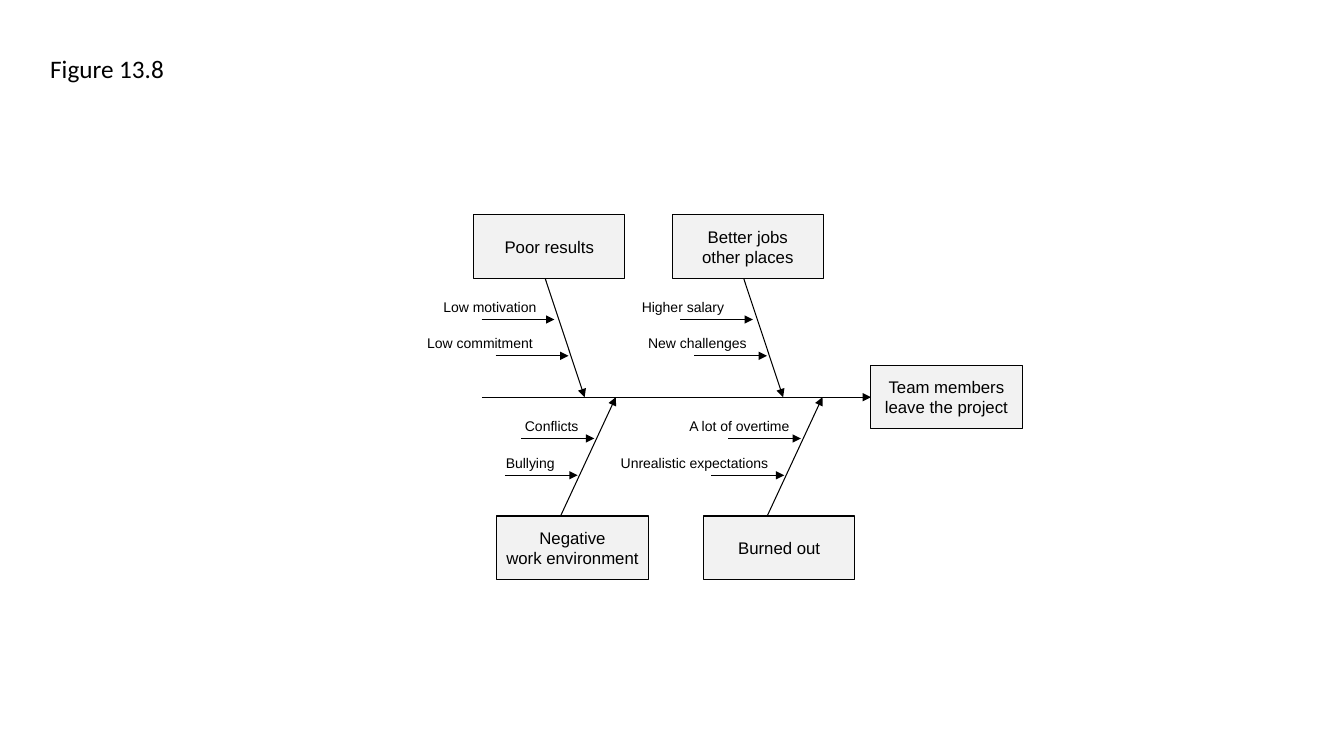
"""Build the fishbone diagram of Figure 13.8."""
from lxml import etree
from pptx import Presentation
from pptx import util as u
from pptx.dml.color import RGBColor
from pptx.enum import shapes, text
from pptx.oxml.ns import qn

TITLE = ("Figure 13.8", 28.8, 34.6, 96.5, 28.8)
EFFECT = ("Team members\nleave the project", 622.1, 261)
TOP_BONES = [
    ("Better jobs\vother places", 480.2,
     [("Higher salary", 451.4, 74.2), ("New challenges", 455.8, 85.7)]),
    ("Poor results", 338.4,
     [("Low motivation", 309.6, 81.4), ("Low commitment", 298.1, 90.7)]),
]
BOTTOM_BONES = [
    ("Burned out", 502.6,
     [("A lot of overtime", 485.3, 87.1), ("Unrealistic expectations", 436.3, 121)]),
    ("Negative\vwork environment", 355,
     [("Conflicts", 367.9, 53.3), ("Bullying", 354.2, 49.7)]),
]
BOX_W, BOX_H = 108, 45.4
SPINE_X, SPINE_Y = 344.2, EFFECT[2] + BOX_H / 2
ARROW_W, LABEL_H, LABEL_RISE = 52, 19.4, 18.5
SIDES = [
    dict(bones=TOP_BONES, top=153.4, edge=198.8, root=51, tip=79.2,
         arrows=[(57.6, 228.2), (67.7, 254.2)]),
    dict(bones=BOTTOM_BONES, top=368.6, edge=368.6, root=45.4, tip=84.9,
         arrows=[(69.5, 313.2), (57.6, 339.5)]),
]
THEME = dict(
    ink=RGBColor(0, 0, 0), fill=RGBColor(0xF2, 0xF2, 0xF2), line=0.75,
    title=dict(name="Calibri", size=u.Pt(18)),
    box=dict(name="Arial", size=u.Pt(12)),
    label=dict(name="Arial", size=u.Pt(10)),
)


def pts(*values):
    return [u.Pt(v) for v in values]


def write(sp, words, style, align, **frame):
    tf = sp.text_frame
    tf.text = words
    for key, value in dict(word_wrap=False, **frame).items():
        setattr(tf, key, value)
    for p in tf.paragraphs:
        p.alignment = align
        for r in p.runs:
            for key, value in THEME[style].items():
                setattr(r.font, key, value)
            r.font.color.rgb = THEME["ink"]


def outline(sp):
    sp.line.color.rgb = THEME["ink"]
    sp.line.width = u.Pt(THEME["line"])


def add_box(s, words, x, y):
    sp = s.shapes.add_shape(shapes.MSO_SHAPE.RECTANGLE, *pts(x, y, BOX_W, BOX_H))
    sp.shadow.inherit = False
    sp.fill.solid()
    sp.fill.fore_color.rgb = THEME["fill"]
    outline(sp)
    write(sp, words, "box", text.PP_ALIGN.CENTER,
          vertical_anchor=text.MSO_ANCHOR.MIDDLE)
    return sp


def add_arrow(s, x1, y1, x2, y2):
    sp = s.shapes.add_connector(shapes.MSO_CONNECTOR.STRAIGHT, *pts(x1, y1, x2, y2))
    outline(sp)
    etree.SubElement(sp.line._get_or_add_ln(), qn("a:tailEnd"), type="triangle")
    etree.SubElement(sp._element.spPr, qn("a:effectLst"))
    return sp


def add_text(s, style, words, x, y, w, h):
    sp = s.shapes.add_textbox(*pts(x, y, w, h))
    write(sp, words, style, text.PP_ALIGN.LEFT,
          auto_size=text.MSO_AUTO_SIZE.SHAPE_TO_FIT_TEXT)


def main():
    prs = Presentation()
    prs.slide_width, prs.slide_height = pts(960, 540)
    s = prs.slides.add_slide(prs.slide_layouts[6])
    add_text(s, "title", *TITLE)

    effect = add_box(s, *EFFECT)
    spine = add_arrow(s, SPINE_X, SPINE_Y, EFFECT[1], SPINE_Y)
    spine.end_connect(effect, 1)

    for side in SIDES:
        for words, x, causes in side["bones"]:
            add_box(s, words, x, side["top"])
            add_arrow(s, x + side["root"], side["edge"], x + side["tip"], SPINE_Y)
            for (cause, left, width), (dx, y) in zip(causes, side["arrows"]):
                add_arrow(s, x + dx - ARROW_W, y, x + dx, y)
                add_text(s, "label", cause, left, y - LABEL_RISE, width, LABEL_H)
    prs.save("out.pptx")


if __name__ == "__main__":
    main()
